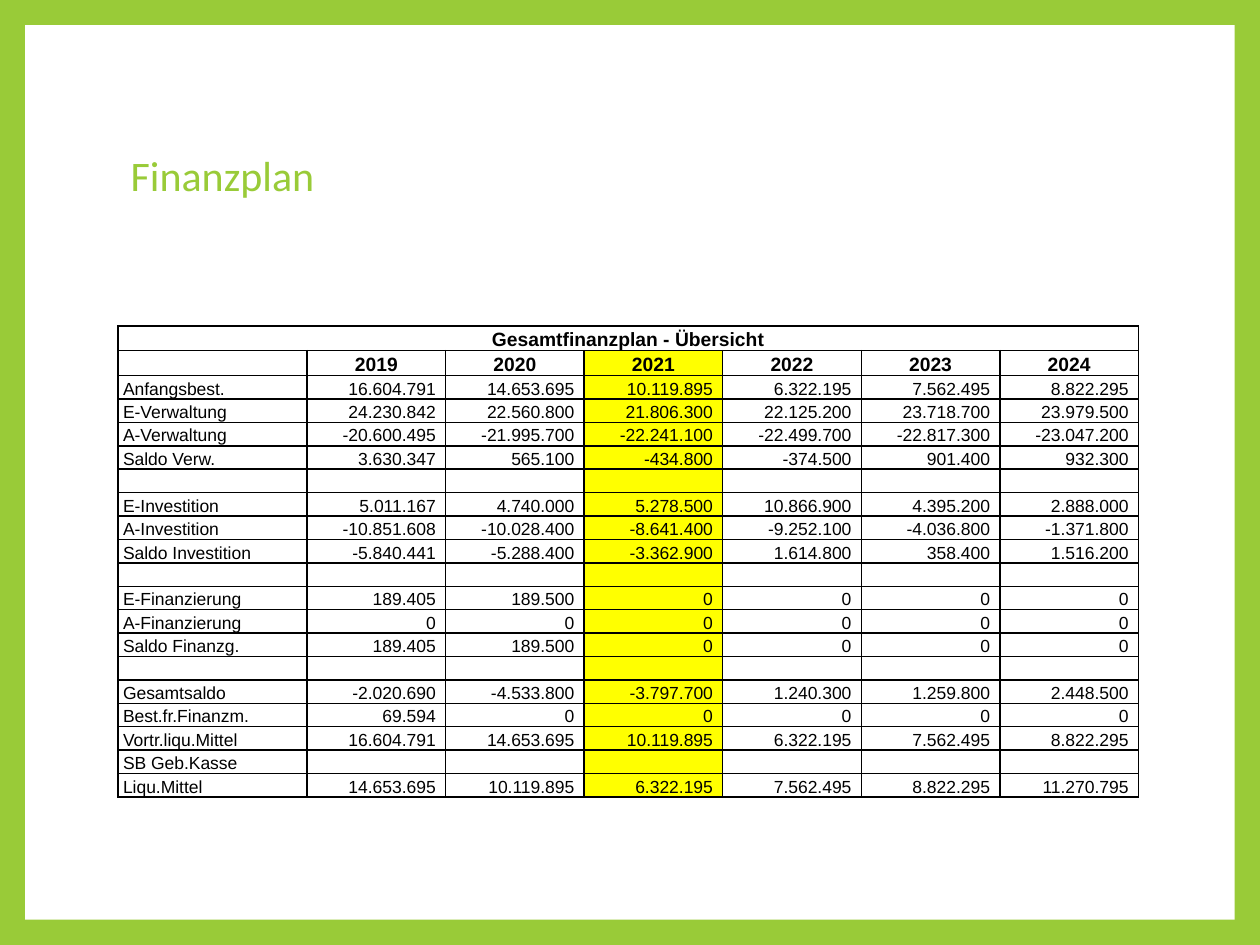
from dataclasses import dataclass

from lxml.etree import SubElement
from pptx import Presentation
from pptx.dml.color import RGBColor as RGB
from pptx.enum.shapes import MSO_SHAPE as Shape
from pptx.enum.text import MSO_ANCHOR as Anchor, PP_ALIGN as Align
from pptx.oxml.ns import qn
from pptx.util import Cm, Pt


@dataclass(frozen=True)
class Theme:
    """Colours, fonts and type sizes of the slide."""
    green: RGB = RGB(0x99, 0xCB, 0x38)
    white: RGB = RGB(0xFF, 0xFF, 0xFF)
    black: RGB = RGB(0, 0, 0)
    yellow: RGB = RGB(0xFF, 0xFF, 0)
    title_font: str = "Calibri"
    table_font: str = "Arial"
    title_size: Pt = Pt(24)
    head_size: Pt = Pt(11)
    body_size: Pt = Pt(10)
    border: Pt = Pt(1)


THEME = Theme()
TABLE_TITLE = "Gesamtfinanzplan - Übersicht"
YEARS = ["2019", "2020", "2021", "2022", "2023", "2024"]
CURRENT_YEAR = "2021"
BLANK = [""] * (len(YEARS) + 1)
PLAN = [
    ["Anfangsbest.", "16.604.791", "14.653.695", "10.119.895", "6.322.195", "7.562.495", "8.822.295"],
    ["E-Verwaltung", "24.230.842", "22.560.800", "21.806.300", "22.125.200", "23.718.700", "23.979.500"],
    ["A-Verwaltung", "-20.600.495", "-21.995.700", "-22.241.100", "-22.499.700", "-22.817.300", "-23.047.200"],
    ["Saldo Verw.", "3.630.347", "565.100", "-434.800", "-374.500", "901.400", "932.300"],
    BLANK,
    ["E-Investition", "5.011.167", "4.740.000", "5.278.500", "10.866.900", "4.395.200", "2.888.000"],
    ["A-Investition", "-10.851.608", "-10.028.400", "-8.641.400", "-9.252.100", "-4.036.800", "-1.371.800"],
    ["Saldo Investition", "-5.840.441", "-5.288.400", "-3.362.900", "1.614.800", "358.400", "1.516.200"],
    BLANK,
    ["E-Finanzierung", "189.405", "189.500", "0", "0", "0", "0"],
    ["A-Finanzierung", "0", "0", "0", "0", "0", "0"],
    ["Saldo Finanzg.", "189.405", "189.500", "0", "0", "0", "0"],
    BLANK,
    ["Gesamtsaldo", "-2.020.690", "-4.533.800", "-3.797.700", "1.240.300", "1.259.800", "2.448.500"],
    ["Best.fr.Finanzm.", "69.594", "0", "0", "0", "0", "0"],
    ["Vortr.liqu.Mittel", "16.604.791", "14.653.695", "10.119.895", "6.322.195", "7.562.495", "8.822.295"],
    ["SB Geb.Kasse"] + [""] * len(YEARS),
    ["Liqu.Mittel", "14.653.695", "10.119.895", "6.322.195", "7.562.495", "8.822.295", "11.270.795"],
]


def set_font(p, name, size, color, bold=False):
    """Set the font of a whole paragraph."""
    font = p.font
    font.name, font.size, font.bold = name, size, bold
    font.color.rgb = color


def set_borders(cell):
    """Draw a solid line on all four sides of a cell."""
    tc_pr = cell._tc.get_or_add_tcPr()
    for i, side in enumerate(("a:lnL", "a:lnR", "a:lnT", "a:lnB")):
        ln = tc_pr.makeelement(qn(side), {"w": str(int(THEME.border))})
        fill = SubElement(ln, qn("a:solidFill"))
        SubElement(fill, qn("a:srgbClr"), val=str(THEME.black))
        tc_pr.insert(i, ln)


def add_frame(s, width, height, border):
    """Lay a white panel over the green background, leaving a border."""
    s.background.fill.solid()
    s.background.fill.fore_color.rgb = THEME.green
    panel = s.shapes.add_shape(Shape.RECTANGLE, border, border, width - 2 * border, height - 2 * border)
    panel.shadow.inherit = False
    panel.fill.solid()
    panel.fill.fore_color.rgb = THEME.white
    panel.line.fill.background()
    s.shapes._spTree.insert(2, panel._element)


def add_title(s, text, left, top, width, height):
    """Place and format the title placeholder."""
    sp = s.shapes.title
    sp.left, sp.top, sp.width, sp.height = left, top, width, height
    tf = sp.text_frame
    tf.text = text
    tf.vertical_anchor = Anchor.MIDDLE
    p = tf.paragraphs[0]
    p.alignment = Align.LEFT
    p.line_spacing = 0.9
    set_font(p, THEME.title_font, THEME.title_size, THEME.green)


def fill_cell(cell, text, align, header, highlight):
    """Write and format one table cell."""
    cell.text = text
    cell.vertical_anchor = Anchor.BOTTOM
    cell.margin_left = Cm(0.1)
    cell.margin_right = Cm(0.2 if align == Align.RIGHT else 0.1)
    cell.margin_top = cell.margin_bottom = 0
    if highlight:
        cell.fill.solid()
        cell.fill.fore_color.rgb = THEME.yellow
    else:
        cell.fill.background()
    set_borders(cell)
    p = cell.text_frame.paragraphs[0]
    p.alignment = align
    size = THEME.head_size if header else THEME.body_size
    set_font(p, THEME.table_font, size, THEME.black, header)
    if not text:
        p._p.get_or_add_endParaRPr().set("sz", str(int(size.pt * 100)))


def add_plan_table(s, left, top, width, height):
    """Build the finance plan: title row, year row and one row per item."""
    rows = [[TABLE_TITLE] + BLANK[1:], [""] + YEARS] + PLAN
    tbl = s.shapes.add_table(len(rows), len(BLANK), left, top, width, height).table
    tbl.first_row = tbl.horz_banding = False
    label_w, head_h = Cm(3.81), Cm(0.5)
    for c, col in enumerate(tbl.columns):
        col.width = label_w if c == 0 else (width - label_w) // len(YEARS)
    current = 1 + YEARS.index(CURRENT_YEAR)
    for r, values in enumerate(rows):
        header = r < 2
        tbl.rows[r].height = head_h if header else (height - 2 * head_h) // len(PLAN)
        for c, text in enumerate(values):
            align = Align.CENTER if header else Align.RIGHT if c else Align.LEFT
            fill_cell(tbl.cell(r, c), text, align, header, r > 0 and c == current)
    tbl.cell(0, 0).merge(tbl.cell(0, len(YEARS)))


def main():
    """Build the slide and save it."""
    prs = Presentation()
    prs.slide_width, prs.slide_height = Cm(25.4), Cm(19.05)
    s = prs.slides.add_slide(prs.slide_layouts[5])
    left, width = Cm(2.38), Cm(20.57)
    add_frame(s, prs.slide_width, prs.slide_height, Cm(0.51))
    add_title(s, "Finanzplan", left, Cm(1.7), width, Cm(3.76))
    add_plan_table(s, left, Cm(6.57), width, Cm(9.5))
    prs.save("out.pptx")


if __name__ == "__main__":
    main()
